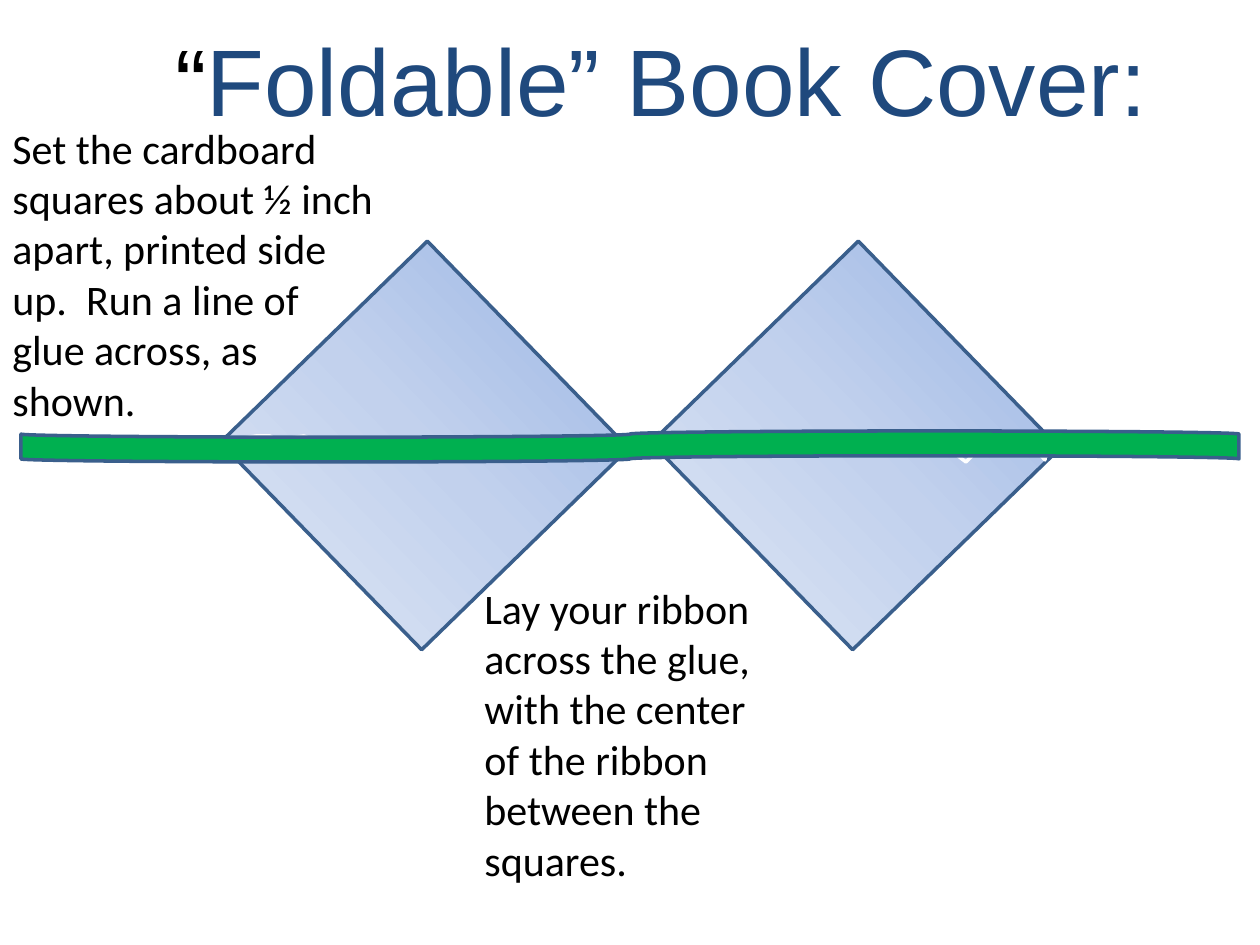
from copy import deepcopy
from dataclasses import dataclass

from pptx import Presentation
from pptx.dml.color import RGBColor
from pptx.enum.shapes import MSO_SHAPE
from pptx.enum.text import MSO_ANCHOR, PP_ALIGN
from pptx.oxml.ns import qn
from pptx.util import Pt

PX = 914400 / 126
TITLE_ONLY = 5
RECTANGLE = MSO_SHAPE.RECTANGLE
PUNCHED_TAPE = MSO_SHAPE.FLOWCHART_PUNCHED_TAPE
MIDDLE = MSO_ANCHOR.MIDDLE
CENTER = PP_ALIGN.CENTER

SQUARE_TOP, SQUARE_SIZE, SQUARE_TILT = 301, 289, 45.8
SQUARE_LEFTS = (280, 711)
GLUE_STARTS = ((231, 440), (662, 446))
GLUE_LINE = (
    (25, -4), (39, -4), (45, 0), (73, -4), (89, 3), (116, -1), (127, 4), (164, 0),
    (181, 9), (202, 0), (232, 6), (247, 4), (266, 4), (287, 3), (304, 16), (320, 0),
    (344, 4), (349, 0), (358, 0), (373, 3), (383, 14), (383, 9),
)


@dataclass(frozen=True)
class Theme:
    title_font: str = "Arial"
    body_font: str = "Calibri"
    title_size: int = 54
    body_size: int = 24
    line_width: int = 2
    text: str = "000000"
    title: str = "1F497D"
    outline: str = "3A5F8C"
    ribbon: str = "00B050"
    glue: str = "FFFFFF"
    cardboard: tuple = ((0, "9AB5E4"), (0.5, "C2D1ED"), (1, "E1E8F5"))


def emu(*lengths):
    return [round(length * PX) for length in lengths]


class SlideBuilder:
    """Draws styled elements on one slide, with lengths in px."""

    def __init__(self, slide, theme):
        self.slide = slide
        self.theme = theme

    def title(self, runs, left, top, width, height):
        shape = self.slide.shapes.title
        shape.left, shape.top, shape.width, shape.height = emu(left, top, width, height)
        shape.text_frame.vertical_anchor = MIDDLE
        paragraph = shape.text_frame.paragraphs[0]
        paragraph.alignment = CENTER
        paragraph.font.name = self.theme.title_font
        paragraph.font.size = Pt(self.theme.title_size)
        for text, color in runs:
            run = paragraph.add_run()
            run.text = text
            run.font.color.rgb = RGBColor.from_string(color)

    def note(self, text, left, top, width, height):
        shape = self.slide.shapes.add_textbox(*emu(left, top, width, height))
        shape.text_frame.word_wrap = True
        paragraph = shape.text_frame.paragraphs[0]
        paragraph.text = text
        paragraph.font.name = self.theme.body_font
        paragraph.font.size = Pt(self.theme.body_size)
        paragraph.font.color.rgb = RGBColor.from_string(self.theme.text)

    def outline(self, shape, color):
        shape.shadow.inherit = False
        shape.line.color.rgb = RGBColor.from_string(color)
        shape.line.width = Pt(self.theme.line_width)

    def square(self, left, top, size, tilt):
        shape = self.slide.shapes.add_shape(RECTANGLE, *emu(left, top, size, size))
        shape.rotation = tilt
        shape.fill.gradient()
        shape.fill.gradient_angle = 270
        stop_list = shape._element.spPr.find(qn("a:gradFill")).find(qn("a:gsLst"))
        stop_list.append(deepcopy(stop_list[0]))
        for stop, (position, color) in zip(shape.fill.gradient_stops, self.theme.cardboard):
            stop.position = position
            stop.color.rgb = RGBColor.from_string(color)
        self.outline(shape, self.theme.outline)

    def glue(self, left, top, offsets):
        builder = self.slide.shapes.build_freeform(left, top, scale=PX)
        points = [(left + x, top + y) for x, y in offsets]
        builder.add_line_segments(points, close=False)
        shape = builder.convert_to_shape()
        shape.fill.background()
        self.outline(shape, self.theme.glue)

    def ribbon(self, left, top, width, height):
        shape = self.slide.shapes.add_shape(PUNCHED_TAPE, *emu(left, top, width, height))
        shape.fill.solid()
        shape.fill.fore_color.rgb = RGBColor.from_string(self.theme.ribbon)
        self.outline(shape, self.theme.outline)


def main():
    presentation = Presentation()
    presentation.slide_width, presentation.slide_height = emu(1260, 945)
    slide = presentation.slides.add_slide(presentation.slide_layouts[TITLE_ONLY])
    theme = Theme()
    builder = SlideBuilder(slide, theme)
    builder.title(
        (("“", theme.text), ("Foldable” Book Cover:", theme.title)), 94, 0, 1134, 158
    )
    builder.note(
        "Set the cardboard squares about ½ inch apart, printed side up.  "
        "Run a line of glue across, as shown.",
        0, 116, 388, 318,
    )
    for left in SQUARE_LEFTS:
        builder.square(left, SQUARE_TOP, SQUARE_SIZE, SQUARE_TILT)
    builder.note(
        "Lay your ribbon across the glue, with the center of the ribbon "
        "between the squares.",
        472, 576, 325, 318,
    )
    for left, top in GLUE_STARTS:
        builder.glue(left, top, GLUE_LINE)
    builder.ribbon(21, 431, 1218, 31)
    presentation.save("out.pptx")


if __name__ == "__main__":
    main()
